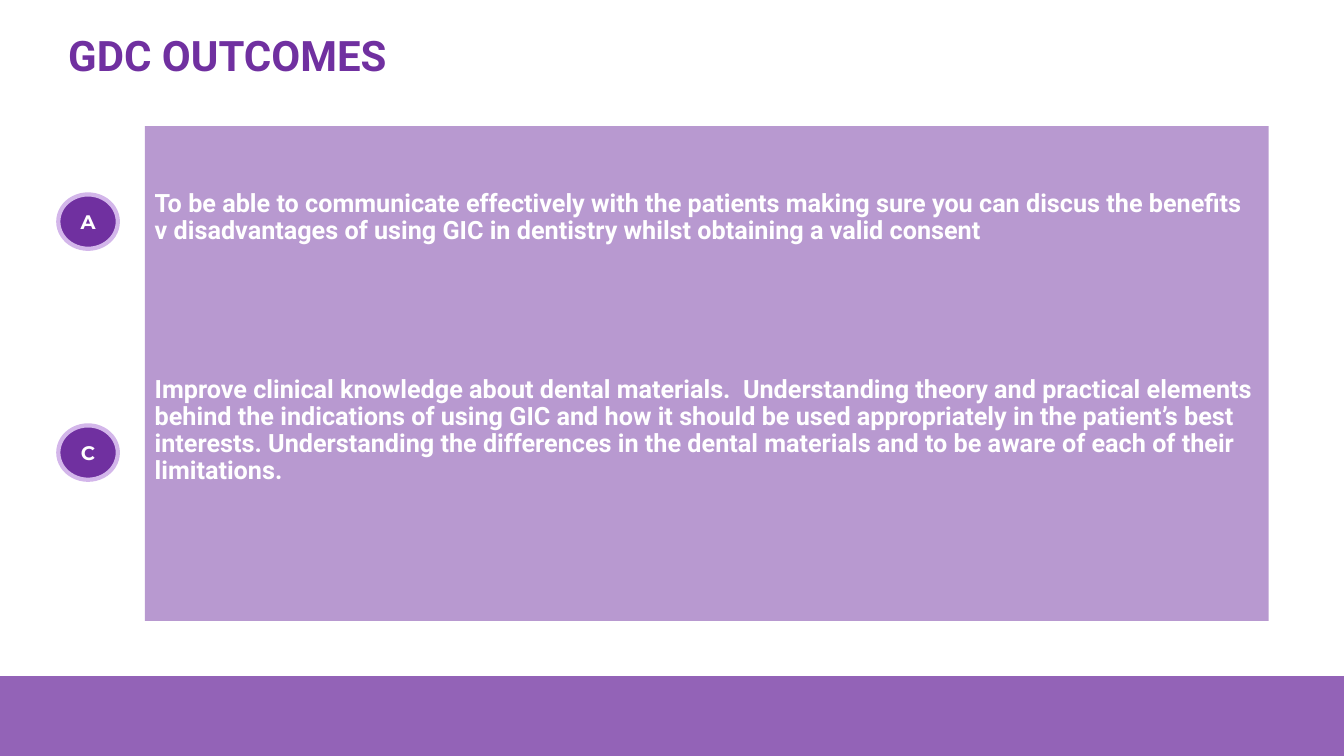
from lxml.etree import SubElement
from pptx import Presentation
from pptx.dml.color import RGBColor as Rgb
from pptx.enum.shapes import MSO_SHAPE as Kind
from pptx.enum.text import MSO_ANCHOR as Anchor, PP_ALIGN as Align
from pptx.oxml.ns import qn
from pptx.util import Cm, Pt

HUES = {"plum": "7030A0", "lilac": "D3B6EA", "white": "FFFFFF"}
GOALS = [
    "To be able to communicate effectively with the patients making sure you can discus "
    "the benefits v disadvantages of using GIC in dentistry whilst obtaining a valid consent",
    "Improve clinical knowledge about dental materials.  Understanding theory and practical "
    "elements behind the indications of using GIC and how it should be used appropriately in "
    "the patient’s best interests. Understanding the differences in the dental materials and "
    "to be aware of each of their limitations.",
]
MARKS = [("A", 1.72), ("C", 7.54)]


def hue(name):
    return Rgb.from_string(HUES[name])


def shape(slide, kind, box, alpha=100):
    item = slide.shapes.add_shape(kind, *map(Cm, box))
    item.shadow.inherit = False
    item.fill.solid()
    item.fill.fore_color.rgb = hue("plum")
    item.line.fill.background()
    if alpha < 100:
        tint = item.fill._xPr.find(qn("a:solidFill"))[0]
        SubElement(tint, qn("a:alpha")).set("val", str(alpha * 1000))
    return item


def write(para, text, size, font="Roboto", tone="white"):
    run = para.add_run()
    run.text = text
    run.font.name = font
    run.font.size = Pt(size)
    run.font.bold = True
    run.font.color.rgb = hue(tone)


def title(slide, box):
    frame = slide.shapes.add_textbox(*map(Cm, box)).text_frame
    frame.word_wrap = True
    frame.vertical_anchor = Anchor.MIDDLE
    para = frame.paragraphs[0]
    para.line_spacing = 0.9
    write(para, "GDC OUTCOMES", 30, tone="plum")


def panel(slide, box):
    frame = shape(slide, Kind.RECTANGLE, box, 49).text_frame
    frame.word_wrap = True
    frame.vertical_anchor = Anchor.TOP
    frame.margin_top = Cm(1.62)
    for i, goal in enumerate(GOALS):
        para = frame.add_paragraph() if i else frame.paragraphs[0]
        para.alignment = Align.LEFT
        para.line_spacing = 0.9
        para.space_before = Pt(94 * i)
        write(para, goal, 18)


def badges(slide, box):
    left, top, width, high = box
    for mark, drop in MARKS:
        disc = shape(slide, Kind.OVAL, (left, top + drop, width, high))
        disc.line.color.rgb = hue("lilac")
        disc.line.width = Pt(3)
        frame = disc.text_frame
        frame.vertical_anchor = Anchor.MIDDLE
        para = frame.paragraphs[0]
        para.alignment = Align.CENTER
        write(para, mark, 14, "Montserrat")


def main():
    deck = Presentation()
    deck.slide_width, deck.slide_height = Cm(33.87), Cm(19.05)
    slide = deck.slides.add_slide(deck.slide_layouts[6])
    shape(slide, Kind.RECTANGLE, (0, 17.04, 33.87, 2.01), 75)
    title(slide, (1.47, 0.43, 23.52, 2.08))
    panel(slide, (3.65, 3.18, 28.32, 12.47))
    badges(slide, (1.47, 3.18, 1.5, 1.37))
    deck.save("out.pptx")


if __name__ == "__main__":
    main()
